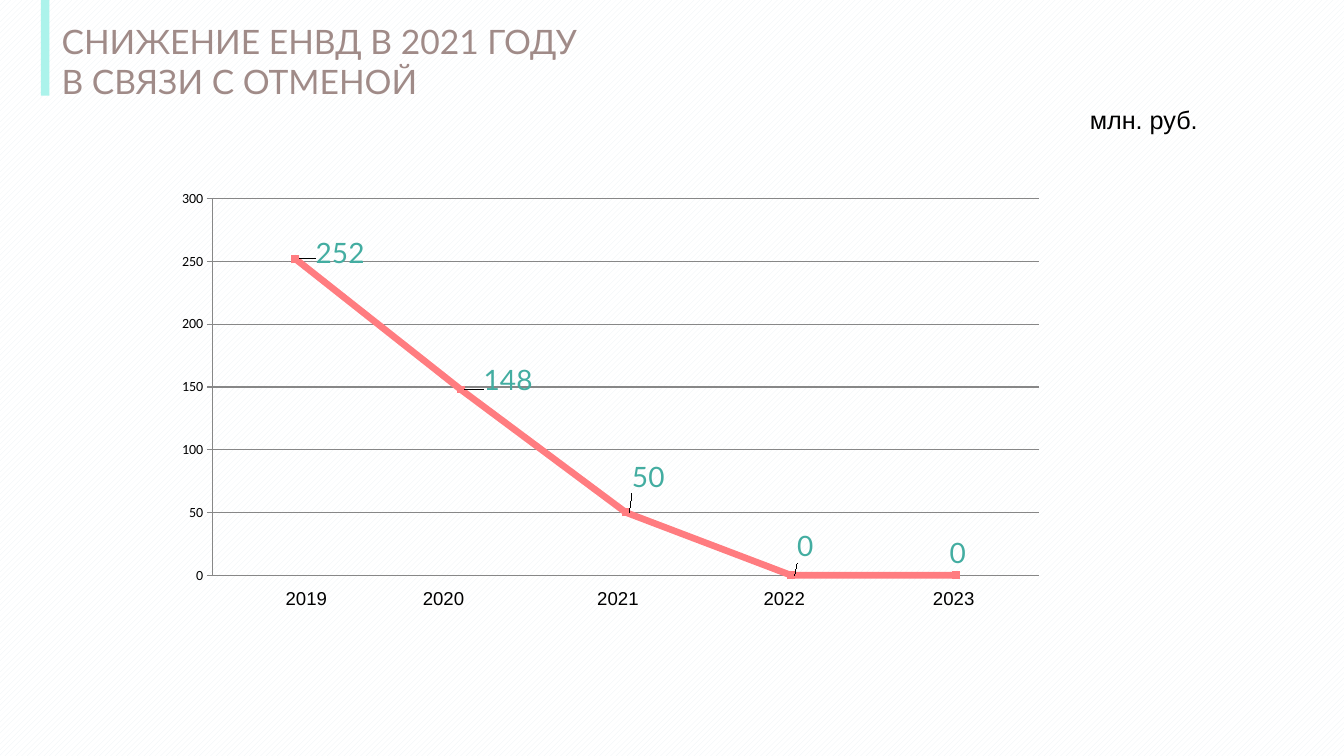
from pptx import Presentation
from pptx.chart.data import CategoryChartData
from pptx.dml.color import RGBColor
from pptx.enum.chart import XL_CHART_TYPE, XL_LABEL_POSITION, XL_MARKER_STYLE, XL_TICK_MARK
from pptx.enum.dml import MSO_PATTERN
from pptx.enum.shapes import MSO_SHAPE
from pptx.enum.text import MSO_ANCHOR, PP_ALIGN
from pptx.oxml import parse_xml
from pptx.oxml.ns import nsdecls, qn
from pptx.util import Pt

WHITE = RGBColor(0xFF, 0xFF, 0xFF)
BLACK = RGBColor(0, 0, 0)
STRIPE = RGBColor(0xEC, 0xF2, 0xF4)
TAUPE = RGBColor(0xA0, 0x8B, 0x88)
MINT = RGBColor(0xAC, 0xF3, 0xEB)
TEAL = RGBColor(0x43, 0xAD, 0xA1)
CORAL = RGBColor(0xFF, 0x7C, 0x80)
PEACH = RGBColor(0xF9, 0xC5, 0xA9)
GREY = RGBColor(0x87, 0x87, 0x87)

TITLE = ["СНИЖЕНИЕ ЕНВД В 2021 ГОДУ", "В СВЯЗИ С ОТМЕНОЙ"]
UNIT = "млн. руб."
VALUES = [252, 148, 50, 0, 0]
LABEL_SHIFTS = [(9, -5), (11, -7), (-1, -26), (-1, -21), (-10, -16)]
YEARS = {"2019": 195, "2020": 293, "2021": 417.6, "2022": 536.4, "2023": 657.4}
CHART_BOX = (117.5, 131, 638, 291.5)
PLOT_BOX = (34.6, 11, 590, 269)


def set_font(font, size, name, color):
    font.size = Pt(size)
    font.name = name
    font.color.rgb = color


def write_text(shape, lines, size, name, color, align=PP_ALIGN.CENTER, wrap=True, insets=(0, 0, 7.2, 3.6)):
    frame = shape.text_frame
    frame.word_wrap = wrap
    frame.vertical_anchor = MSO_ANCHOR.TOP
    frame.margin_left, frame.margin_top, frame.margin_right, frame.margin_bottom = map(Pt, insets)
    frame.text = "\n".join(lines)
    for paragraph in frame.paragraphs:
        paragraph.alignment = align
        paragraph.space_before = Pt(0)
        for run in paragraph.runs:
            set_font(run.font, size, name, color)


def manual_layout(modes="", **fractions):
    parts = "".join(f'<c:{key} val="{value:.4f}"/>' for key, value in fractions.items())
    return parse_xml(f'<c:layout {nsdecls("c")}><c:manualLayout>{modes}{parts}</c:manualLayout></c:layout>')


def add_line_chart(slide):
    width, height = CHART_BOX[2:]
    data = CategoryChartData()
    data.categories = [str(number + 1) for number in range(len(VALUES))]
    data.add_series("Series 1", VALUES)
    chart = slide.shapes.add_chart(XL_CHART_TYPE.LINE_MARKERS, *map(Pt, CHART_BOX), data).chart
    chart.has_legend = False
    chart.has_title = False
    set_font(chart.font, 10, "Calibri", BLACK)
    chart.category_axis.visible = False
    axis = chart.value_axis
    axis.minimum_scale, axis.maximum_scale, axis.major_unit = 0, 300, 50
    axis.major_tick_mark = XL_TICK_MARK.OUTSIDE
    axis.has_major_gridlines = True
    for line in (axis.format.line, axis.major_gridlines.format.line):
        line.color.rgb = GREY
        line.width = Pt(0.75)

    plot = chart.plots[0]
    plot.vary_by_categories = False
    series = plot.series[0]
    series.smooth = False
    series.format.line.color.rgb = CORAL
    series.format.line.width = Pt(4.75)
    for index, (shift_x, shift_y) in enumerate(LABEL_SHIFTS):
        point = series.points[index]
        point.marker.style = XL_MARKER_STYLE.SQUARE
        point.marker.size = 5
        point.marker.format.fill.solid()
        point.marker.format.fill.fore_color.rgb = PEACH if index else CORAL
        point.marker.format.line.fill.background()
        point.format.line.color.rgb = CORAL
        point.format.line.width = Pt(4.75)
        set_font(point.data_label.font, 20, "Lato", TEAL)
        point.data_label.position = XL_LABEL_POSITION.RIGHT
    labels = series._element.iter(qn("c:dLbl"))
    for label, (shift_x, shift_y) in zip(list(labels), LABEL_SHIFTS):
        label.insert(1, manual_layout(x=shift_x / width, y=shift_y / height))

    plot_area = chart._chartSpace.find(".//" + qn("c:plotArea"))
    for layout in plot_area.findall(qn("c:layout")):
        plot_area.remove(layout)
    left, top, plot_width, plot_height = PLOT_BOX
    modes = '<c:layoutTarget val="inner"/><c:xMode val="edge"/><c:yMode val="edge"/>'
    plot_area.insert(0, manual_layout(
        modes, x=left / width, y=top / height, w=plot_width / width, h=plot_height / height))


def main():
    presentation = Presentation()
    presentation.slide_width, presentation.slide_height = Pt(960), Pt(540)
    slide = presentation.slides.add_slide(presentation.slide_layouts[5])
    background = slide.background.fill
    background.patterned()
    background.pattern = MSO_PATTERN.WIDE_UPWARD_DIAGONAL
    background.fore_color.rgb = STRIPE
    background.back_color.rgb = WHITE

    title = slide.shapes.title
    title.left, title.top, title.width, title.height = Pt(44), Pt(15), Pt(606), Pt(62)
    write_text(title, TITLE, 24, "Lato", TAUPE, align=PP_ALIGN.LEFT)

    accent = slide.shapes.add_shape(MSO_SHAPE.RECTANGLE, Pt(29.3), Pt(0), Pt(6), Pt(68.3))
    accent.shadow.inherit = False
    accent.fill.solid()
    accent.fill.fore_color.rgb = MINT
    accent.line.fill.background()

    unit = slide.shapes.add_textbox(Pt(771), Pt(71.3), Pt(92), Pt(29))
    write_text(unit, [UNIT], 18, "Arial", BLACK, wrap=False, insets=(7.2, 3.6, 7.2, 3.6))

    add_line_chart(slide)
    for year, left in YEARS.items():
        box = slide.shapes.add_textbox(Pt(left), Pt(419), Pt(54.7), Pt(19.4))
        write_text(box, [year], 13.3, "Arial", BLACK)

    presentation.save("out.pptx")


if __name__ == "__main__":
    main()
